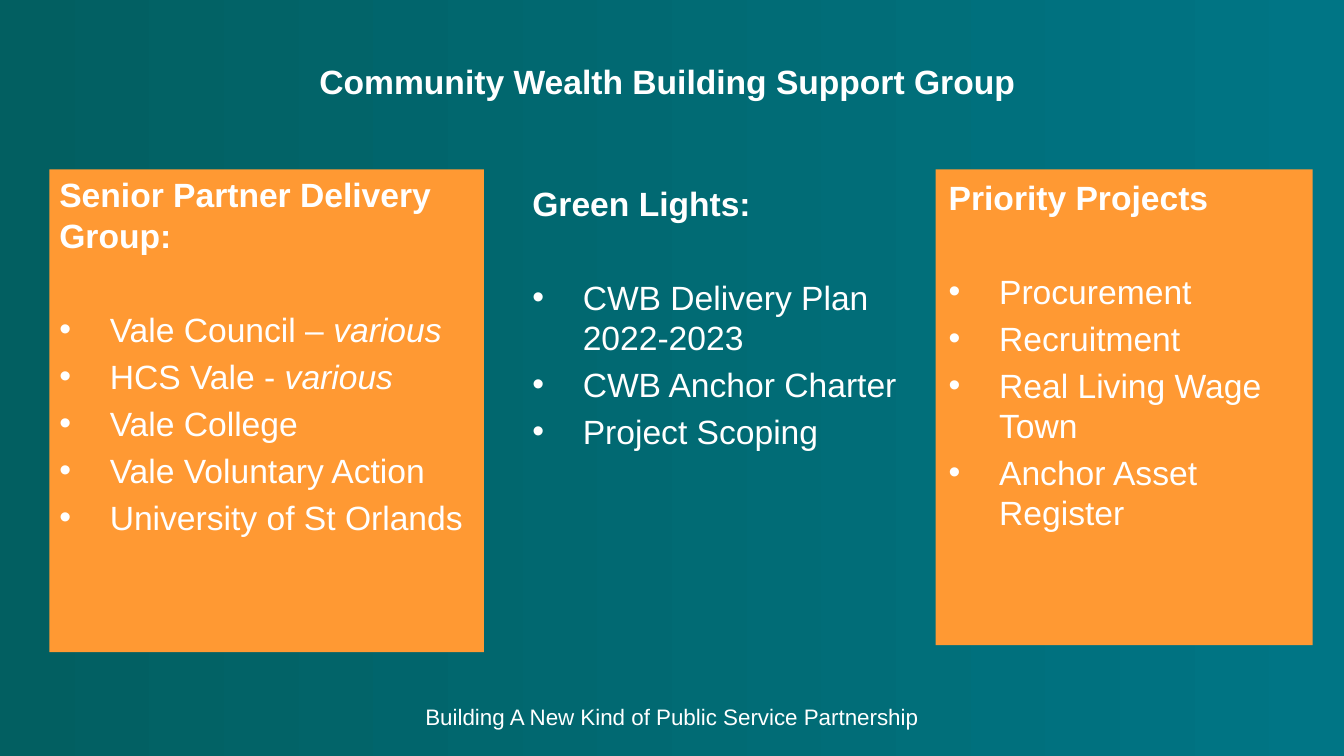
import pptx
import pptx.dml.color
import pptx.enum.shapes
import pptx.enum.text
import pptx.oxml
import pptx.oxml.ns
import pptx.util
from pptx.util import Inches

WHITE = "FFFFFF"
ORANGE = "FF9933"
TEAL_DARK, TEAL_LIGHT = "025F61", "007585"
LINE_GAP = 4.8
HEADING_GAP = 38.4
WIDE_MARGINS = (0.13, 0.07)
PLAIN_MARGINS = (0.1, 0.05)


def rgb(code):
    return pptx.dml.color.RGBColor.from_string(code)


def style(paragraph, size, bold=False):
    font = paragraph.font
    font.name = "Arial"
    font.size = pptx.util.Pt(size)
    font.bold = bold
    font.color.rgb = rgb(WHITE)


def add_bullet(paragraph):
    properties = paragraph._p.get_or_add_pPr()
    properties.set("marL", str(Inches(0.5)))
    properties.set("indent", str(Inches(-0.5)))
    namespace = pptx.oxml.ns.nsdecls("a")
    marks = (
        f'<a:buClr {namespace}><a:srgbClr val="{WHITE}"/></a:buClr>',
        f'<a:buFont {namespace} typeface="Arial"/>',
        f'<a:buChar {namespace} char="•"/>',
    )
    # Bullet marks must stand between the spacing and the default run style.
    for mark in marks:
        properties.insert_element_before(pptx.oxml.parse_xml(mark), "a:defRPr")


def paint_background(slide):
    fill = slide.background.fill
    fill.gradient()
    fill.gradient_angle = 0
    for stop, colour in zip(fill.gradient_stops, (TEAL_DARK, TEAL_LIGHT)):
        stop.color.rgb = rgb(colour)


def add_banner(slide, box, text, size, bold=False):
    """Place one centred line of text in the box."""
    banner = slide.shapes.add_textbox(*map(Inches, box))
    frame = banner.text_frame
    frame.word_wrap = True
    frame.vertical_anchor = pptx.enum.text.MSO_ANCHOR.MIDDLE
    line = frame.paragraphs[0]
    line.text = text
    line.alignment = pptx.enum.text.PP_ALIGN.CENTER
    style(line, size, bold)


def add_column(slide, box, heading, items, fill=None, margins=WIDE_MARGINS):
    """Place a bold heading over bullets; each item is (text, italic ending)."""
    place = tuple(map(Inches, box))
    if fill:
        column = slide.shapes.add_shape(
            pptx.enum.shapes.MSO_SHAPE.RECTANGLE, *place)
        column.shadow.inherit = False
        column.fill.solid()
        column.fill.fore_color.rgb = rgb(fill)
        column.line.fill.background()
    else:
        column = slide.shapes.add_textbox(*place)
    frame = column.text_frame
    frame.word_wrap = True
    frame.vertical_anchor = pptx.enum.text.MSO_ANCHOR.TOP
    frame.margin_left = frame.margin_right = Inches(margins[0])
    frame.margin_top = frame.margin_bottom = Inches(margins[1])

    title = frame.paragraphs[0]
    title.text = heading
    title.alignment = pptx.enum.text.PP_ALIGN.LEFT
    title.space_before = pptx.util.Pt(LINE_GAP)
    style(title, 24, bold=True)

    for index, (text, ending) in enumerate(items):
        item = frame.add_paragraph()
        item.alignment = pptx.enum.text.PP_ALIGN.LEFT
        item.space_before = pptx.util.Pt(LINE_GAP if index else HEADING_GAP)
        item.add_run().text = text
        if ending:
            italic = item.add_run()
            italic.text = ending
            italic.font.italic = True
        style(item, 24)
        add_bullet(item)


def main():
    deck = pptx.Presentation()
    deck.slide_width, deck.slide_height = Inches(13.33), Inches(7.5)
    slide = deck.slides.add_slide(deck.slide_layouts[6])
    paint_background(slide)
    add_banner(slide, (1, 0.39, 11.33, 0.83),
               "Community Wealth Building Support Group ", 24, bold=True)
    add_column(slide, (0.49, 1.68, 4.31, 4.79), "Senior Partner Delivery Group:", [
        ("Vale Council – ", "various"),
        ("HCS Vale - ", "various"),
        ("Vale College", ""),
        ("Vale Voluntary Action", ""),
        ("University of St Orlands", ""),
    ], ORANGE, PLAIN_MARGINS)
    add_banner(slide, (0, 6.92, 13.33, 0.37),
               "Building A New Kind of Public Service Partnership", 16)
    add_column(slide, (5.15, 1.74, 4.31, 4.73), "Green Lights:", [
        ("CWB Delivery Plan 2022-2023", ""),
        ("CWB Anchor Charter", ""),
        ("Project Scoping", ""),
    ])
    add_column(slide, (9.28, 1.68, 3.74, 4.72), "Priority Projects", [
        ("Procurement", ""),
        ("Recruitment", ""),
        ("Real Living Wage Town", ""),
        ("Anchor Asset Register", ""),
    ], ORANGE)
    deck.save("out.pptx")


if __name__ == "__main__":
    main()
